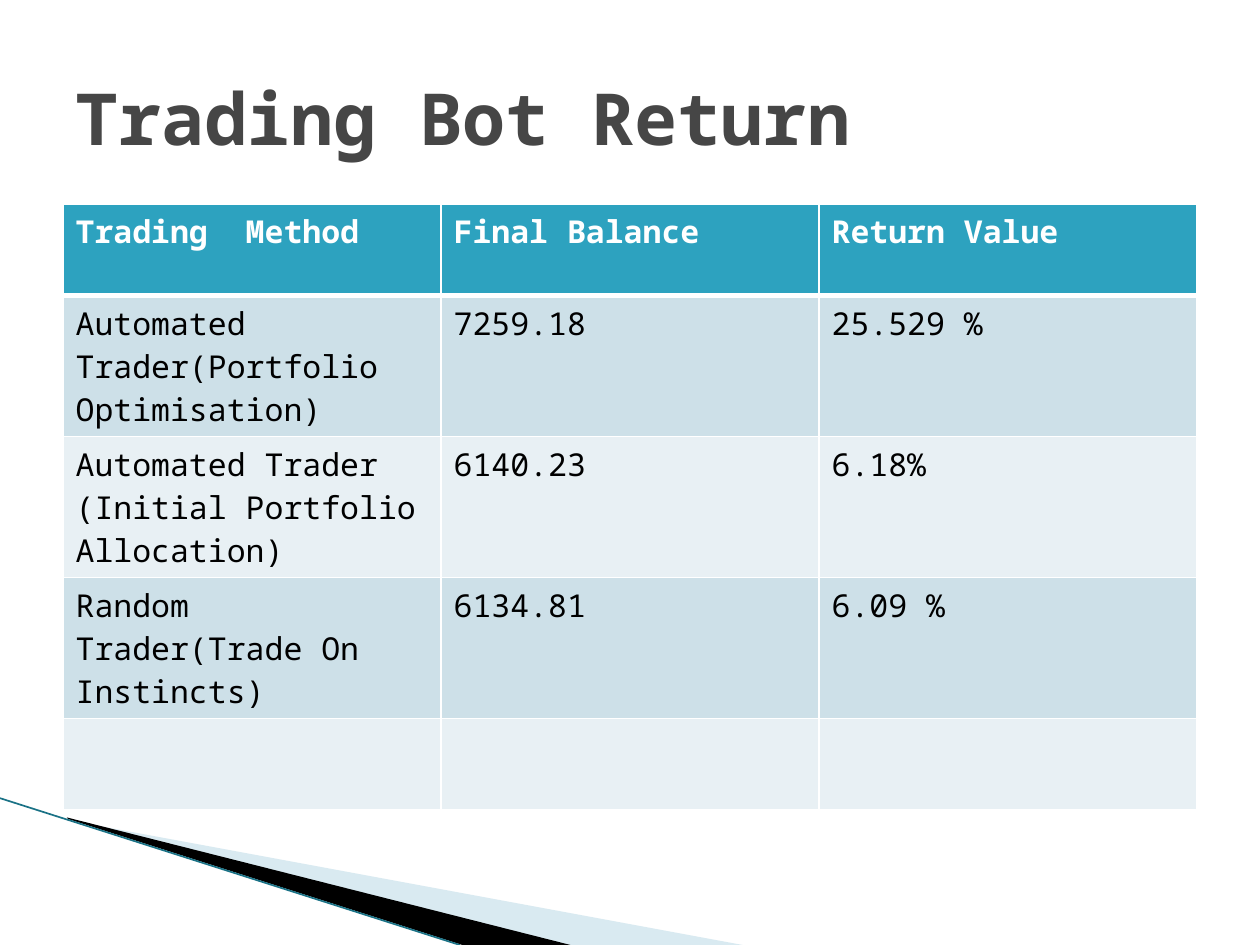
from dataclasses import dataclass

from lxml.etree import SubElement
from pptx import Presentation
from pptx.dml.color import RGBColor
from pptx.enum.shapes import MSO_CONNECTOR
from pptx.enum.text import MSO_ANCHOR
from pptx.oxml.ns import qn
from pptx.util import Cm, Pt


@dataclass(frozen=True)
class Theme:
    font: str = "Noto Sans Mono"
    title_size: int = 41
    table_size: int = 18
    title: str = "464646"
    white: str = "FFFFFF"
    black: str = "000000"
    header: str = "2DA2BF"
    odd_row: str = "CDE0E8"
    even_row: str = "E8F0F4"
    pale_wedge: str = "A0CBDC"
    edge: str = "1A7286"


class SlideBuilder:
    """Draws themed elements on the current slide."""

    def __init__(self, slide, theme):
        self.slide = slide
        self.theme = theme

    def style(self, paragraph, size, color, bold=False):
        font = paragraph.font
        font.name = self.theme.font
        font.size = Pt(size)
        font.bold = bold
        font.color.rgb = RGBColor.from_string(color)

    def wedge(self, points, color, opacity=100):
        start, *others = [(Cm(x), Cm(y)) for x, y in points]
        builder = self.slide.shapes.build_freeform(*start)
        builder.add_line_segments(others, close=True)
        shape = builder.convert_to_shape()
        shape.shadow.inherit = False
        shape.line.fill.background()
        shape.fill.solid()
        shape.fill.fore_color.rgb = RGBColor.from_string(color)
        if opacity < 100:
            color_element = next(shape.element.spPr.iter(qn("a:srgbClr")))
            SubElement(color_element, qn("a:alpha"), val=str(opacity * 1000))

    def line(self, start, end, color, width):
        ends = [Cm(value) for value in (*start, *end)]
        connector = self.slide.shapes.add_connector(MSO_CONNECTOR.STRAIGHT, *ends)
        connector.line.color.rgb = RGBColor.from_string(color)
        connector.line.width = Pt(width)
        SubElement(connector.element.spPr, qn("a:effectLst"))

    def title(self, text, left, top, width, height):
        box = self.slide.shapes.add_textbox(Cm(left), Cm(top), Cm(width), Cm(height))
        frame = box.text_frame
        frame.word_wrap = True
        frame.vertical_anchor = MSO_ANCHOR.MIDDLE
        paragraph = frame.paragraphs[0]
        paragraph.text = text
        self.style(paragraph, self.theme.title_size, self.theme.title, bold=True)

    def border(self, cell, widths):
        properties = cell._tc.get_or_add_tcPr()
        for side, width in widths.items():
            line = SubElement(properties, qn(f"a:ln{side}"), w=str(Pt(width)))
            fill = SubElement(line, qn("a:solidFill"))
            SubElement(fill, qn("a:srgbClr"), val=self.theme.white)

    def cell(self, cell, text, row_index):
        theme = self.theme
        is_header = row_index == 0
        top = 3 if row_index == 1 else 1
        self.border(cell, {"L": 1, "R": 1, "T": top, "B": 3 if is_header else 1})
        band = theme.odd_row if row_index % 2 else theme.even_row
        cell.fill.solid()
        cell.fill.fore_color.rgb = RGBColor.from_string(theme.header if is_header else band)
        paragraph = cell.text_frame.paragraphs[0]
        paragraph.text = text
        self.style(paragraph, theme.table_size, theme.white if is_header else theme.black, is_header)

    def table(self, rows, left, top, width, row_heights):
        frame = self.slide.shapes.add_table(
            len(rows), len(rows[0]), Cm(left), Cm(top), Cm(width), Cm(sum(row_heights))
        )
        for row_index, (row, height) in enumerate(zip(rows, row_heights)):
            frame.table.rows[row_index].height = Cm(height)
            for column_index, text in enumerate(row):
                self.cell(frame.table.cell(row_index, column_index), text, row_index)


def main():
    presentation = Presentation()
    presentation.slide_width, presentation.slide_height = Cm(25.4), Cm(19.05)
    theme = Theme()
    builder = SlideBuilder(presentation.slides.add_slide(presentation.slide_layouts[6]), theme)

    builder.wedge(
        [(1.4, 16.54), (14.97, 19.05), (11.48, 19.05), (1.4, 16.51)], theme.pale_wedge, opacity=40
    )
    builder.wedge([(1.35, 16.48), (11.5, 19.05), (9.32, 19.05), (1.37, 16.51)], theme.black)
    builder.line((0, 16.09), (9.27, 19.05), theme.edge, 0.95)
    builder.title("Trading Bot Return", 1.27, 0.76, 22.86, 3.18)
    rows = [
        ("Trading  Method", "Final Balance", "Return Value"),
        ("Automated Trader(Portfolio Optimisation)", "7259.18", "25.529 %"),
        ("Automated Trader (Initial Portfolio Allocation)", "6140.23", "6.18%"),
        ("Random Trader(Trade On Instincts)", "6134.81", "6.09 %"),
        ("", "", ""),
    ]
    short_row, tall_row = 1.85, 2.84
    row_heights = [short_row, tall_row, tall_row, tall_row, short_row]
    builder.table(rows, 1.27, 4.11, 22.86, row_heights)
    presentation.save("out.pptx")


if __name__ == "__main__":
    main()
